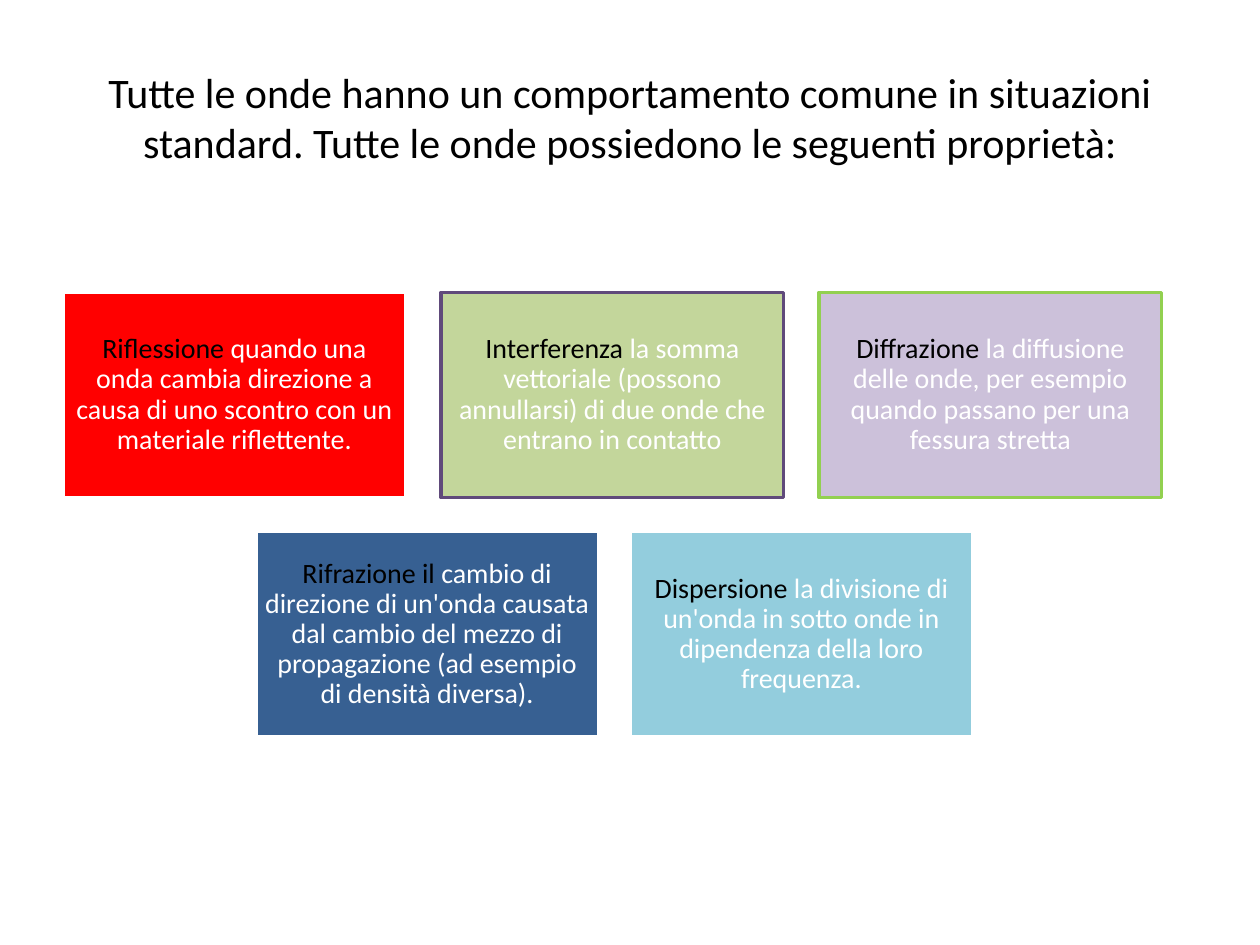
from pptx import Presentation
from pptx.dml.color import RGBColor
from pptx.enum import shapes, text
from pptx.util import Inches, Pt

FONT = "Calibri"
BLACK, WHITE = "000000", "FFFFFF"
TITLE = ("Tutte le onde hanno un comportamento comune in situazioni standard. "
         "Tutte le onde possiedono le seguenti proprietà:")
CARD_WIDTH, CARD_HEIGHT = 2.72, 1.63

# Each card: term, definition, fill, outline
FIRST_ROW = [
    ("Riflessione", " quando una onda cambia direzione a causa di uno scontro "
     "con un materiale riflettente.", "FF0000", WHITE),
    ("Interferenza", " la somma vettoriale (possono annullarsi) di due onde "
     "che entrano in contatto", "C3D69B", "604A7B"),
    ("Diffrazione", " la diffusione delle onde, per esempio quando passano "
     "per una fessura stretta", "CCC1DA", "92D050"),
]
SECOND_ROW = [
    ("Rifrazione il", " cambio di direzione di un'onda causata dal cambio del "
     "mezzo di propagazione (ad esempio di densità diversa).", "376092", WHITE),
    ("Dispersione", " la divisione di un'onda in sotto onde in dipendenza "
     "della loro frequenza.", "93CDDD", WHITE),
]


def color(value):
    return RGBColor.from_string(value)


def style(run, size, value):
    run.font.name = FONT
    run.font.size = Pt(size)
    run.font.color.rgb = color(value)


def add_title(slide, left, top, width, height):
    title = slide.shapes.title
    title.left, title.top = Inches(left), Inches(top)
    title.width, title.height = Inches(width), Inches(height)
    frame = title.text_frame
    frame.text = TITLE
    frame.vertical_anchor = text.MSO_ANCHOR.MIDDLE
    frame.paragraphs[0].alignment = text.PP_ALIGN.CENTER
    style(frame.paragraphs[0].runs[0], 24, BLACK)


def add_card(slide, left, top, term, definition, fill, outline):
    card = slide.shapes.add_shape(
        shapes.MSO_SHAPE.RECTANGLE, Inches(left), Inches(top),
        Inches(CARD_WIDTH), Inches(CARD_HEIGHT))
    card.shadow.inherit = False
    card.fill.solid()
    card.fill.fore_color.rgb = color(fill)
    card.line.color.rgb = color(outline)
    card.line.width = Pt(2)

    frame = card.text_frame
    frame.word_wrap = True
    frame.vertical_anchor = text.MSO_ANCHOR.MIDDLE
    frame.margin_left = frame.margin_right = Inches(0.07)
    frame.margin_top = frame.margin_bottom = Inches(0.07)
    paragraph = frame.paragraphs[0]
    paragraph.alignment = text.PP_ALIGN.CENTER
    paragraph.line_spacing = 0.9
    for words, value in ((term, BLACK), (definition, WHITE)):
        run = paragraph.add_run()
        run.text = words
        style(run, 16, value)


def add_card_row(slide, left, top, pitch, cards):
    for column, card in enumerate(cards):
        add_card(slide, left + column * pitch, top, *card)


def main():
    deck = Presentation()
    deck.slide_width, deck.slide_height = Inches(10), Inches(7.5)
    slide = deck.slides.add_slide(deck.slide_layouts[5])

    # Heading
    add_title(slide, 0.5, 0.3, 9, 1.25)

    # Wave properties: three cards above two
    add_card_row(slide, 0.5, 2.32, 3.0, FIRST_ROW)
    add_card_row(slide, 2.03, 4.22, 2.97, SECOND_ROW)

    deck.save("out.pptx")


if __name__ == "__main__":
    main()
